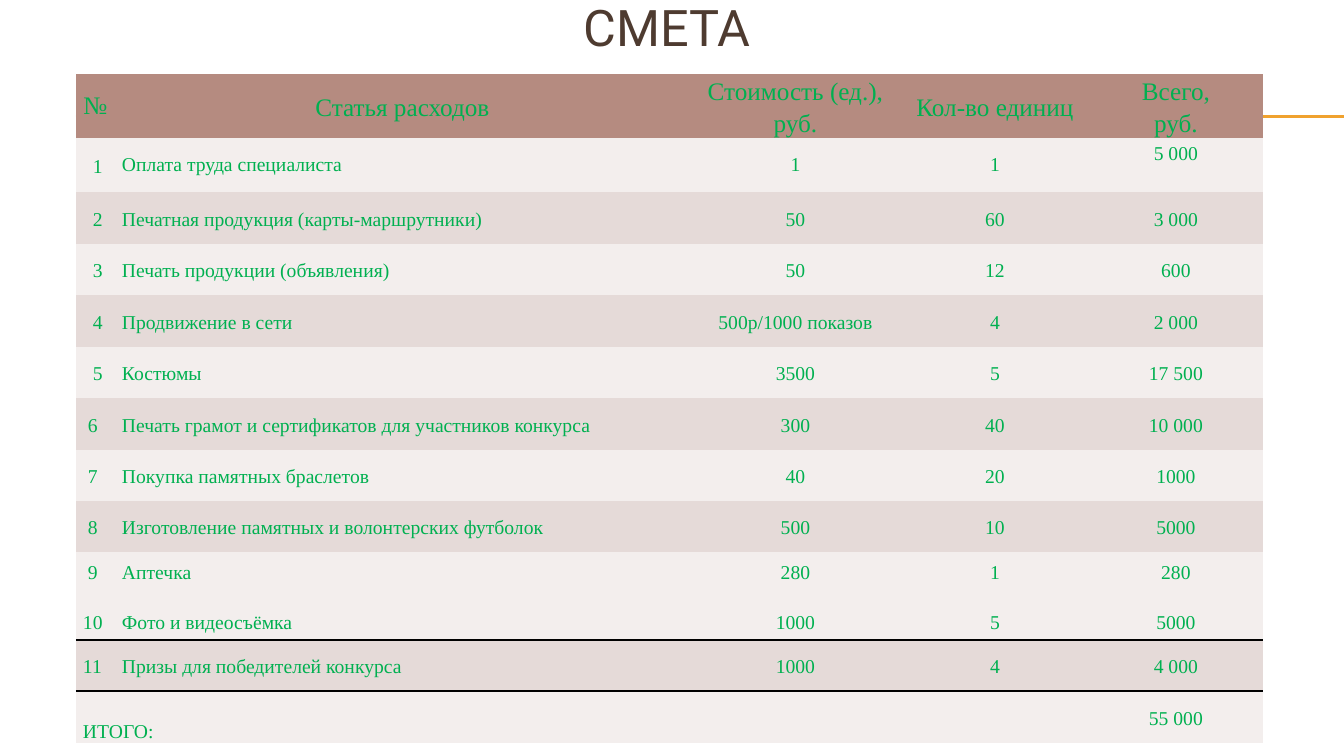
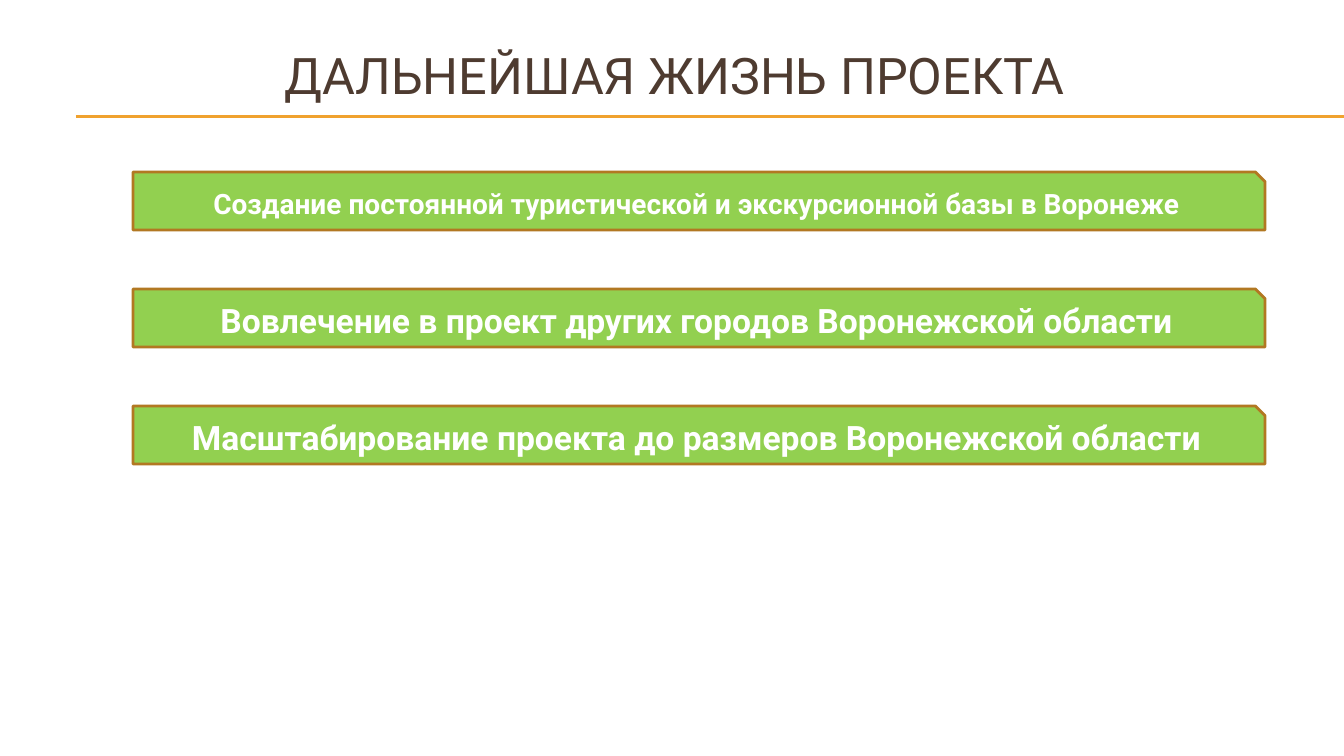
from lxml.etree import SubElement
from pptx import Presentation
from pptx.dml.color import RGBColor
from pptx.enum.shapes import MSO_CONNECTOR, MSO_SHAPE
from pptx.enum.text import MSO_ANCHOR, MSO_AUTO_SIZE, PP_ALIGN
from pptx.oxml import parse_xml
from pptx.oxml.ns import nsdecls, qn
from pptx.util import Emu, Pt


class Theme:
    title = RGBColor(0x4E, 0x3B, 0x30)
    rule = RGBColor(0xF0, 0xA2, 0x2E)
    head = RGBColor(0xB5, 0x8B, 0x80)
    bands = RGBColor(0xE5, 0xDA, 0xD8), RGBColor(0xF3, 0xEE, 0xED)
    ink = RGBColor(0x00, 0xB0, 0x50)
    box = RGBColor(0x92, 0xD0, 0x50)
    edge = RGBColor(0xB2, 0x78, 0x22)
    white = RGBColor(0xFF, 0xFF, 0xFF)
    sans, serif = "Roboto", "Times New Roman"
    title_size, head_size, cell_size = 36, 18, 14


def px(n):
    return Emu(round(n * 12192000 / 1344))


def style(frame, font, size, color, align, bold=False):
    for par in frame.paragraphs:
        par.alignment = align
        for run in par.runs:
            run.font.name = font
            run.font.size = Pt(size)
            run.font.color.rgb = color
            run.font.bold = bold


deck = Presentation()
deck.slide_width, deck.slide_height = px(1344), px(756)
layout = deck.slide_layouts[5]

# Slides and titles
slides = []
for text, left, top in [("СМЕТА", 123, -48), ("ДАЛЬНЕЙШАЯ ЖИЗНЬ ПРОЕКТА", 130, 0)]:
    slide = deck.slides.add_slide(layout)
    title = slide.shapes.title
    title.left, title.top = px(left), px(top)
    title.width, title.height = px(1089), px(149)
    frame = title.text_frame
    frame.text = text
    frame.auto_size = MSO_AUTO_SIZE.NONE
    frame.vertical_anchor = MSO_ANCHOR.MIDDLE
    style(frame, Theme.sans, Theme.title_size, Theme.title, PP_ALIGN.CENTER)
    slides.append(slide)
budget, future = slides

# Double rule, moved to the shared layout
for y in (116, 117):
    rule = budget.shapes.add_connector(
        MSO_CONNECTOR.STRAIGHT, px(76), px(y), px(1344), px(y))
    rule.line.color.rgb = Theme.rule
    rule.line.width = Pt(0.75)
    SubElement(rule.element.spPr, qn("a:effectLst"))
    layout.shapes.element.append(rule.element)

# Budget table
rows = [
    ("№", "Статья расходов", "Стоимость (ед.), руб.", "Кол-во единиц", "Всего,\nруб."),
    ("1", "Оплата труда специалиста", "1", "1", "5 000"),
    ("2", "Печатная продукция (карты-маршрутники)", "50", "60", "3 000"),
    ("3", "Печать продукции (объявления)", "50", "12", "600"),
    ("4", "Продвижение в сети", "500р/1000 показов", "4", "2 000"),
    ("5", "Костюмы", "3500", "5", "17 500"),
    ("6", "Печать грамот и сертификатов для участников конкурса", "300", "40", "10 000"),
    ("7", "Покупка памятных браслетов", "40", "20", "1000"),
    ("8", "Изготовление памятных и волонтерских футболок", "500", "10", "5000"),
    ("9\n10", "Аптечка\nФото и видеосъёмка", "280\n1000", "1\n5", "280\n5000"),
    ("11", "Призы для победителей конкурса", "1000", "4", "4 000"),
    ("ИТОГО:", "", "", "", "55 000"),
]
widths = [39, 575, 211, 188, 174]
heights = [64, 54] + [52, 51] * 3 + [51, 88, 51, 52]
last = len(rows) - 1
table = budget.shapes.add_table(
    len(rows), len(widths), px(76), px(74), px(sum(widths)), px(sum(heights))).table
table.horz_banding = False
plain = "{2D5ABB26-0587-4C30-8999-92F81FD0307C}"
table._tbl.tblPr.find(qn("a:tableStyleId")).text = plain
for col, width in zip(table.columns, widths):
    col.width = px(width)
for row, height in zip(table.rows, heights):
    row.height = px(height)
table.cell(last, 0).merge(table.cell(last, 3))

for r, row in enumerate(rows):
    for c, text in enumerate(row):
        cell = table.cell(r, c)
        cell.fill.solid()
        cell.fill.fore_color.rgb = Theme.bands[r % 2] if r else Theme.head
        cell.margin_left = cell.margin_right = px(7)
        cell.margin_top = cell.margin_bottom = 0
        cell.vertical_anchor = MSO_ANCHOR.MIDDLE
        if cell.is_spanned:
            continue
        frame = cell.text_frame
        frame.text = text
        align = PP_ALIGN.LEFT if r and c < 2 else PP_ALIGN.CENTER
        size = Theme.cell_size if r else Theme.head_size
        style(frame, Theme.serif, size, Theme.ink, align)
        single = r < 2 and (r == 0) == (c == 0)
        for par in frame.paragraphs:
            par.line_spacing = 1.0 if single else 1.15
            # One-digit numbers are indented
            if r and c == 0 and len(par.text) == 1:
                par._p.get_or_add_pPr().set("marL", str(px(10 if r < 6 else 5)))
        if r and len(frame.paragraphs) > 1:
            frame.paragraphs[1].space_before = Pt(18)

# Black line above the prizes row
for r, side in ((9, "lnB"), (10, "lnT")):
    for c in range(len(widths)):
        line = parse_xml(
            f'<a:{side} {nsdecls("a")} w="12700"><a:solidFill>'
            f'<a:srgbClr val="000000"/></a:solidFill></a:{side}>')
        table.cell(r, c)._tc.get_or_add_tcPr().insert(0, line)

# Cells set off the middle
table.cell(1, 4).vertical_anchor = MSO_ANCHOR.TOP
table.cell(1, 4).margin_top = px(5)
table.cell(last, 0).vertical_anchor = MSO_ANCHOR.BOTTOM

# Plans for the future
plans = [
    ("Создание постоянной туристической и экскурсионной базы в Воронеже", 20),
    ("Вовлечение в проект других городов Воронежской области", 24),
    ("Масштабирование проекта до размеров Воронежской области", 24),
]
for i, (text, size) in enumerate(plans):
    box = future.shapes.add_shape(
        MSO_SHAPE.SNIP_1_RECTANGLE, px(133), px(172 + 117 * i), px(1132), px(58))
    box.shadow.inherit = False
    box.fill.solid()
    box.fill.fore_color.rgb = Theme.box
    box.line.color.rgb = Theme.edge
    box.line.width = Pt(2)
    frame = box.text_frame
    frame.text = text
    frame.word_wrap = True
    frame.vertical_anchor = MSO_ANCHOR.MIDDLE
    style(frame, Theme.sans, size, Theme.white, PP_ALIGN.CENTER, True)

deck.save("out.pptx")
